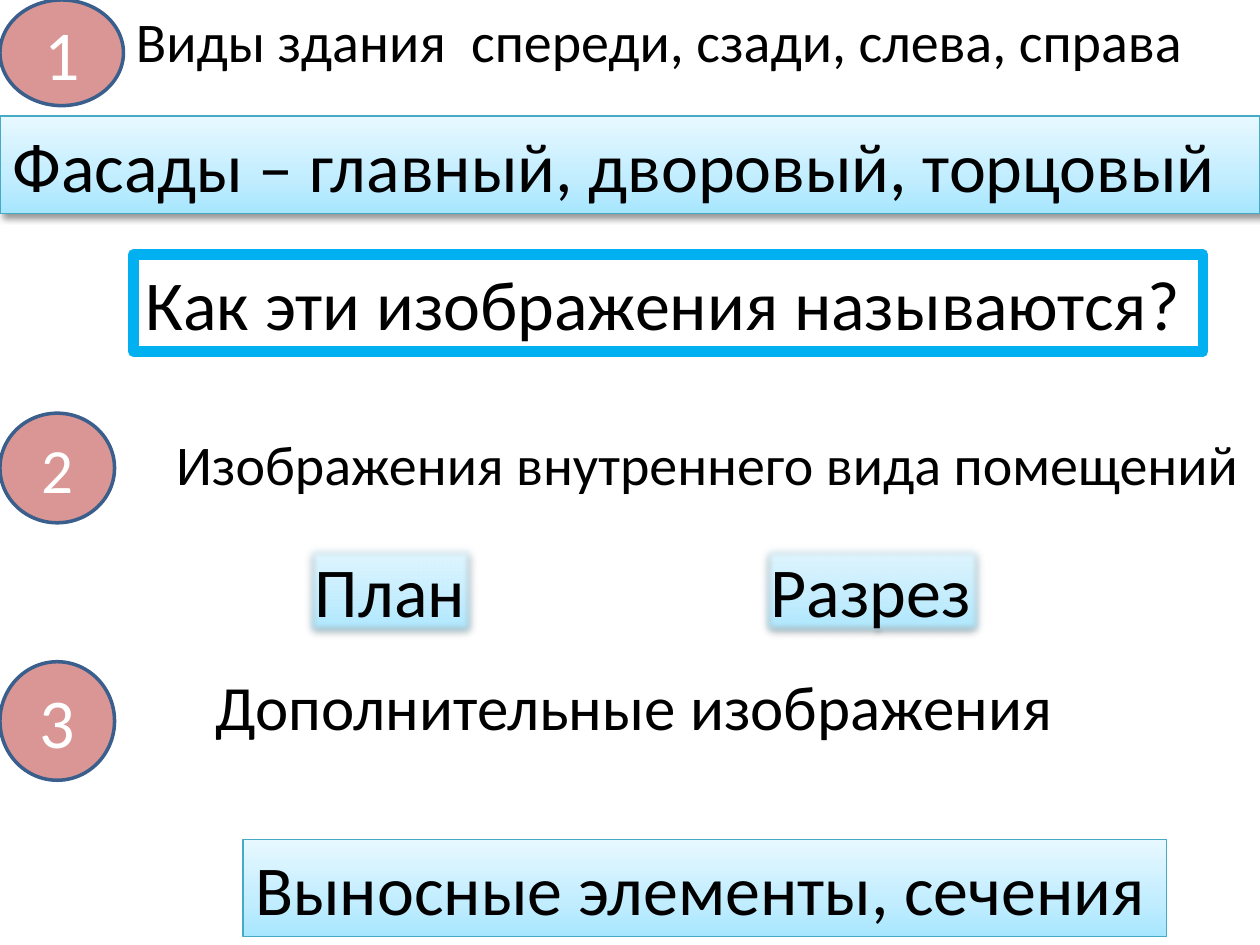
"""Build a quiz slide about the kinds of building drawings."""
import copy

import pptx
import pptx.dml.color
import pptx.enum.shapes
import pptx.enum.text
import pptx.oxml
import pptx.oxml.ns
import pptx.util

Cm = pptx.util.Cm
Pt = pptx.util.Pt
SHAPES = pptx.enum.shapes.MSO_SHAPE


def color(value):
    return pptx.dml.color.RGBColor.from_string(value)


class SlideBuilder:
    font = "Calibri"
    ink = "000000"
    badge_fill, badge_line = "D99694", "3A5F8C"
    panel_line, question_line = "46AAC5", "00B0F0"
    gradient = ((0, "A7E6FF"), (0.35, "C1EDFF"), (1, "E7F8FF"))
    panel_height = 1.96

    def __init__(self, slide):
        self.slide = slide

    def set_text(self, shape, text, size, ink=ink, wrap=True, centered=False):
        frame = shape.text_frame
        frame.word_wrap = wrap
        frame.text = text
        paragraph = frame.paragraphs[0]
        if centered:
            frame.vertical_anchor = pptx.enum.text.MSO_ANCHOR.MIDDLE
            paragraph.alignment = pptx.enum.text.PP_ALIGN.CENTER
        else:
            frame.vertical_anchor = pptx.enum.text.MSO_ANCHOR.TOP
            frame.auto_size = pptx.enum.text.MSO_AUTO_SIZE.SHAPE_TO_FIT_TEXT
            paragraph.alignment = pptx.enum.text.PP_ALIGN.LEFT
        paragraph.font.name = self.font
        paragraph.font.size = Pt(size)
        paragraph.font.color.rgb = color(ink)

    def outline(self, kind, left, top, width, height, line, line_width):
        shape = self.slide.shapes.add_shape(kind, Cm(left), Cm(top), Cm(width), Cm(height))
        shape.shadow.inherit = False
        shape.line.color.rgb = color(line)
        shape.line.width = Pt(line_width)
        return shape

    def heading(self, text, left, top, width, height, size=32):
        box = self.slide.shapes.add_textbox(Cm(left), Cm(top), Cm(width), Cm(height))
        self.set_text(box, text, size)

    def badge(self, text, top, width, height, size=40):
        shape = self.outline(SHAPES.OVAL, 0, top, width, height, self.badge_line, 2)
        shape.fill.solid()
        shape.fill.fore_color.rgb = color(self.badge_fill)
        self.set_text(shape, text, size, "FFFFFF", centered=True)

    def question(self, text, left, top, width):
        shape = self.outline(SHAPES.RECTANGLE, left, top, width, self.panel_height,
                             self.question_line, 6)
        shape.fill.background()
        self.set_text(shape, text, 40)

    def panel(self, text, left, top, width, shadow=None, soft_edge=0, wrap=True):
        shape = self.outline(SHAPES.RECTANGLE, left, top, width, self.panel_height,
                             self.panel_line, 0.75)
        shape.fill.gradient()
        shape.fill.gradient_angle = 90
        stop_list = shape._element.spPr.find(".//" + pptx.oxml.ns.qn("a:gsLst"))
        stop_list.append(copy.deepcopy(stop_list[-1]))
        for stop, (position, value) in zip(shape.fill.gradient_stops, self.gradient):
            stop.position = position
            stop.color.rgb = color(value)
        effects = shape._element.spPr.find(pptx.oxml.ns.qn("a:effectLst"))
        namespace = pptx.oxml.ns.nsdecls("a")
        if shadow:
            opacity, blur, distance, angle = shadow
            effects.append(pptx.oxml.parse_xml(
                f'<a:outerShdw {namespace} blurRad="{Pt(blur)}" dist="{Pt(distance)}" '
                f'dir="{angle * 60000}" rotWithShape="0"><a:srgbClr val="000000">'
                f'<a:alpha val="{opacity * 1000}"/></a:srgbClr></a:outerShdw>'))
        if soft_edge:
            effects.append(pptx.oxml.parse_xml(
                f'<a:softEdge {namespace} rad="{Pt(soft_edge)}"/>'))
        self.set_text(shape, text, 40, wrap=wrap)


def main():
    presentation = pptx.Presentation()
    presentation.slide_width = Cm(25.4)
    presentation.slide_height = Cm(19.05)
    builder = SlideBuilder(presentation.slides.add_slide(presentation.slide_layouts[6]))

    builder.heading("Виды здания  спереди, сзади, слева, справа", 2.49, 0, 23.39, 1.63)
    builder.question("Как эти изображения называются?", 2.69, 5.13, 21.56)
    builder.badge("1", 0, 2.49, 2.13)
    builder.panel("Фасады – главный, дворовый, торцовый", 0, 2.34, 25.4, shadow=(40, 4, 3, 45))

    builder.heading("Изображения внутреннего вида помещений", 3.3, 8.53, 22.61, 1.63)
    builder.badge("2", 8.33, 2.31, 2.21, size=36)
    for text, left, width in (("План", 6.1, 3.56), ("Разрез", 15.29, 4.6)):
        builder.panel(text, left, 10.92, width, shadow=(38, 3.1, 1.6, 90), soft_edge=5)

    builder.heading("Дополнительные изображения", 4.09, 13.34, 17.55, 1.8, size=36)
    builder.badge("3", 13.34, 2.31, 2.39)
    builder.panel("Выносные элементы, сечения", 4.9, 16.92, 18.62, wrap=False)

    presentation.save("out.pptx")


if __name__ == "__main__":
    main()
